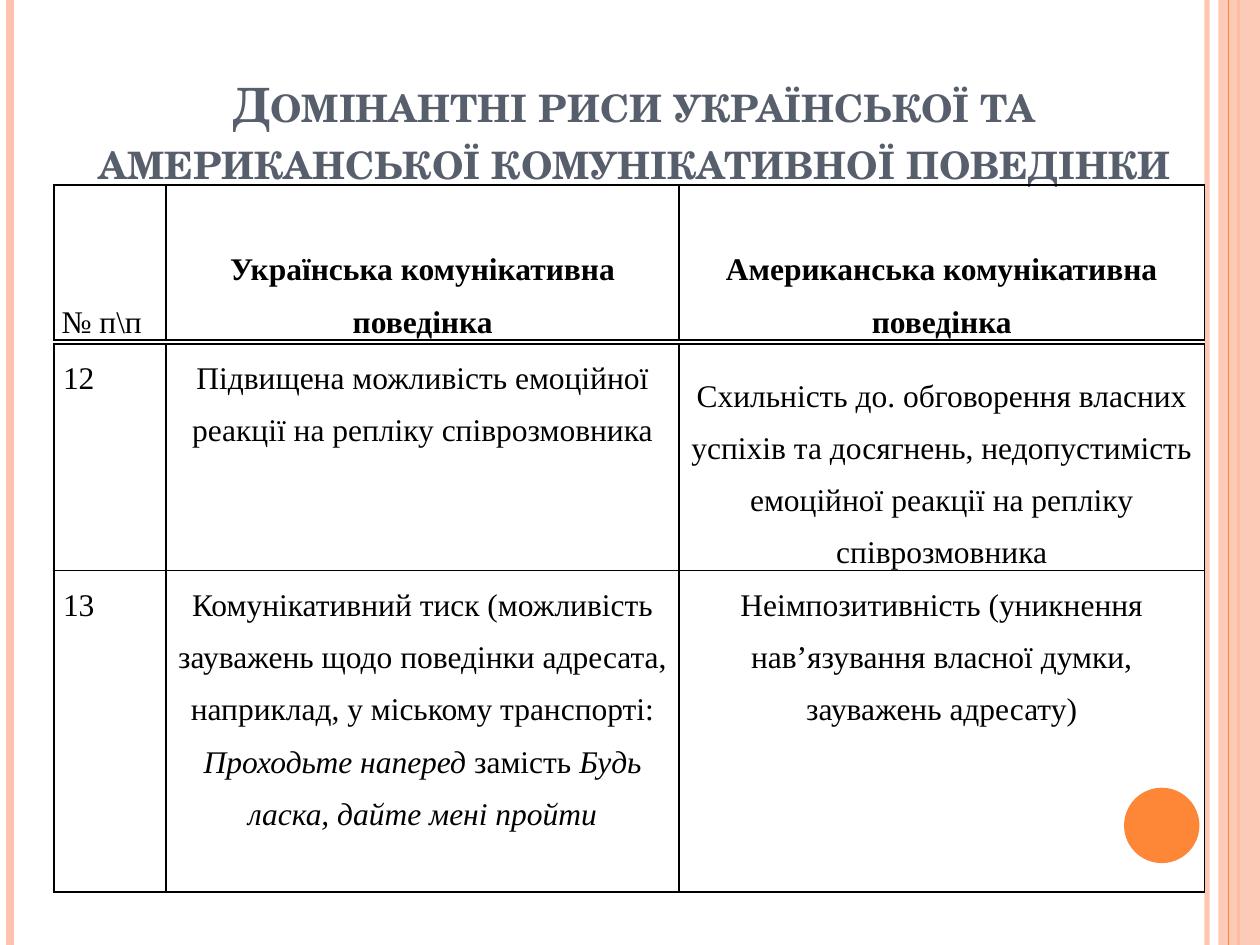
from typing import NamedTuple

from lxml.etree import SubElement
from pptx import Presentation
from pptx.dml.color import RGBColor
from pptx.enum.shapes import MSO_CONNECTOR, MSO_SHAPE
from pptx.enum.text import MSO_ANCHOR, PP_ALIGN
from pptx.oxml import parse_xml
from pptx.oxml.ns import nsdecls, qn
from pptx.util import Cm, Pt

WIDTH, HEIGHT = 25.4, 19.05
PEACH, ORANGE, SLATE, BLACK = "FEC3AE", "FE8637", "575F6D", "000000"
TABLE_LEFT = 1.09
COLUMNS = (2.26, 10.34, 10.59)


class Stripe(NamedTuple):
    x: float
    color: str
    weight: float
    opacity: int = 100


class Run(NamedTuple):
    text: str
    bold: bool = False
    italic: bool = False


class Entry(NamedTuple):
    runs: tuple[Run, ...]
    align: PP_ALIGN = PP_ALIGN.CENTER
    anchor: MSO_ANCHOR = MSO_ANCHOR.TOP


class Row(NamedTuple):
    height: float
    entries: tuple[Entry, ...]


def rgb(color: str) -> RGBColor:
    return RGBColor.from_string(color)


def set_opacity(element, percent: int) -> None:
    for clr in element.iter(qn("a:srgbClr")):
        SubElement(clr, qn("a:alpha")).set("val", str(percent * 1000))


def add_stripe(slide, stripe: Stripe) -> None:
    x = Cm(stripe.x)
    line = slide.shapes.add_connector(MSO_CONNECTOR.STRAIGHT, x, 0, x, Cm(HEIGHT))
    line.line.color.rgb = rgb(stripe.color)
    line.line.width = Pt(stripe.weight)
    sp_pr = line._element.spPr
    if stripe.opacity < 100:
        set_opacity(sp_pr, stripe.opacity)
    SubElement(sp_pr, qn("a:effectLst"))


def add_solid(slide, kind: MSO_SHAPE, x: float, y: float, w: float, h: float,
              color: str, opacity: int = 100) -> None:
    sp = slide.shapes.add_shape(kind, Cm(x), Cm(y), Cm(w), Cm(h))
    sp.shadow.inherit = False
    sp.fill.solid()
    sp.fill.fore_color.rgb = rgb(color)
    sp.line.fill.background()
    if opacity < 100:
        set_opacity(sp._element.spPr, opacity)


def add_title(slide, text: str) -> None:
    tf = slide.shapes.add_textbox(Cm(1.27), Cm(0.76), Cm(23.04), Cm(3.18)).text_frame
    tf.word_wrap = True
    tf.vertical_anchor = MSO_ANCHOR.BOTTOM
    p = tf.paragraphs[0]
    p.alignment = PP_ALIGN.CENTER
    r = p.add_run()
    r.text = text
    r.font.name = "TeX Gyre Schola"
    r.font.size = Pt(27)
    r.font.bold = True
    r.font.color.rgb = rgb(SLATE)
    r.font._element.set("cap", "small")


def set_borders(cell) -> None:
    tc_pr = cell._tc.get_or_add_tcPr()
    for i, side in enumerate("LRTB"):
        tc_pr.insert(i, parse_xml(
            f'<a:ln{side} {nsdecls("a")} w="{Pt(1)}"><a:solidFill>'
            f'<a:srgbClr val="{BLACK}"/></a:solidFill></a:ln{side}>'))


def fill_cell(cell, entry: Entry, inset: float) -> None:
    cell.fill.background()
    set_borders(cell)
    cell.margin_left = cell.margin_right = Cm(inset)
    cell.margin_top = cell.margin_bottom = 0
    cell.vertical_anchor = entry.anchor
    p = cell.text_frame.paragraphs[0]
    p.alignment = entry.align
    p.line_spacing = 1.5
    for run in entry.runs:
        r = p.add_run()
        r.text = run.text
        r.font.name = "Times New Roman"
        r.font.size = Pt(18)
        r.font.bold = run.bold
        r.font.italic = run.italic
        r.font.color.rgb = rgb(BLACK)


def add_grid(slide, top: float, rows: tuple[Row, ...], inset: float) -> None:
    table = slide.shapes.add_table(
        len(rows), len(COLUMNS), Cm(TABLE_LEFT), Cm(top),
        Cm(sum(COLUMNS)), Cm(sum(row.height for row in rows))).table
    table.first_row = table.horz_banding = False
    for column, width in zip(table.columns, COLUMNS):
        column.width = Cm(width)
    for i, row in enumerate(rows):
        table.rows[i].height = Cm(row.height)
        for j, entry in enumerate(row.entries):
            fill_cell(table.cell(i, j), entry, inset)


STRIPES = (
    Stripe(24.33, PEACH, 3, 93),
    Stripe(0.2, PEACH, 4.5),
    Stripe(24.97, ORANGE, 1.5),
)
BOTTOM = MSO_ANCHOR.BOTTOM
HEADER = (
    Row(3.12, (
        Entry((Run("№ п\\п"),), PP_ALIGN.JUSTIFY, BOTTOM),
        Entry((Run("Українська комунікативна поведінка", bold=True),), anchor=BOTTOM),
        Entry((Run("Американська комунікативна поведінка", bold=True),), anchor=BOTTOM),
    )),
)
TRAITS = (
    Row(4.32, (
        Entry((Run("12"),), PP_ALIGN.JUSTIFY),
        Entry((Run("Підвищена можливість емоційної реакції на репліку співрозмовника"),)),
        Entry((Run("Схильність до. обговорення власних успіхів та досягнень, "
                   "недопустимість емоційної реакції на репліку співрозмовника"),),
              anchor=BOTTOM),
    )),
    Row(6.48, (
        Entry((Run("13"),), PP_ALIGN.JUSTIFY),
        Entry((
            Run("Комунікативний тиск (можливість зауважень щодо поведінки адресата, "
                "наприклад, у міському транспорті: "),
            Run("Проходьте наперед", italic=True),
            Run(" замість "),
            Run("Будь ласка, дайте мені пройти", italic=True),
        )),
        Entry((Run("Неімпозитивність (уникнення нав’язування власної думки, "
                   "зауважень адресату)"),)),
    )),
)


def main() -> None:
    prs = Presentation()
    prs.slide_width, prs.slide_height = Cm(WIDTH), Cm(HEIGHT)
    s = prs.slides.add_slide(prs.slide_layouts[6])
    for stripe in STRIPES:
        add_stripe(s, stripe)
    add_solid(s, MSO_SHAPE.RECTANGLE, 24.56, 0, 0.84, HEIGHT, PEACH, 87)
    add_stripe(s, Stripe(24.77, ORANGE, 0.75))
    add_solid(s, MSO_SHAPE.OVAL, 22.66, 15.88, 1.52, 1.52, ORANGE)
    add_title(s, "Домінантні риси української та американської комунікативної поведінки")
    add_grid(s, 3.73, HEADER, 0.15)
    add_grid(s, 6.93, TRAITS, 0.18)
    prs.save("out.pptx")


if __name__ == "__main__":
    main()
